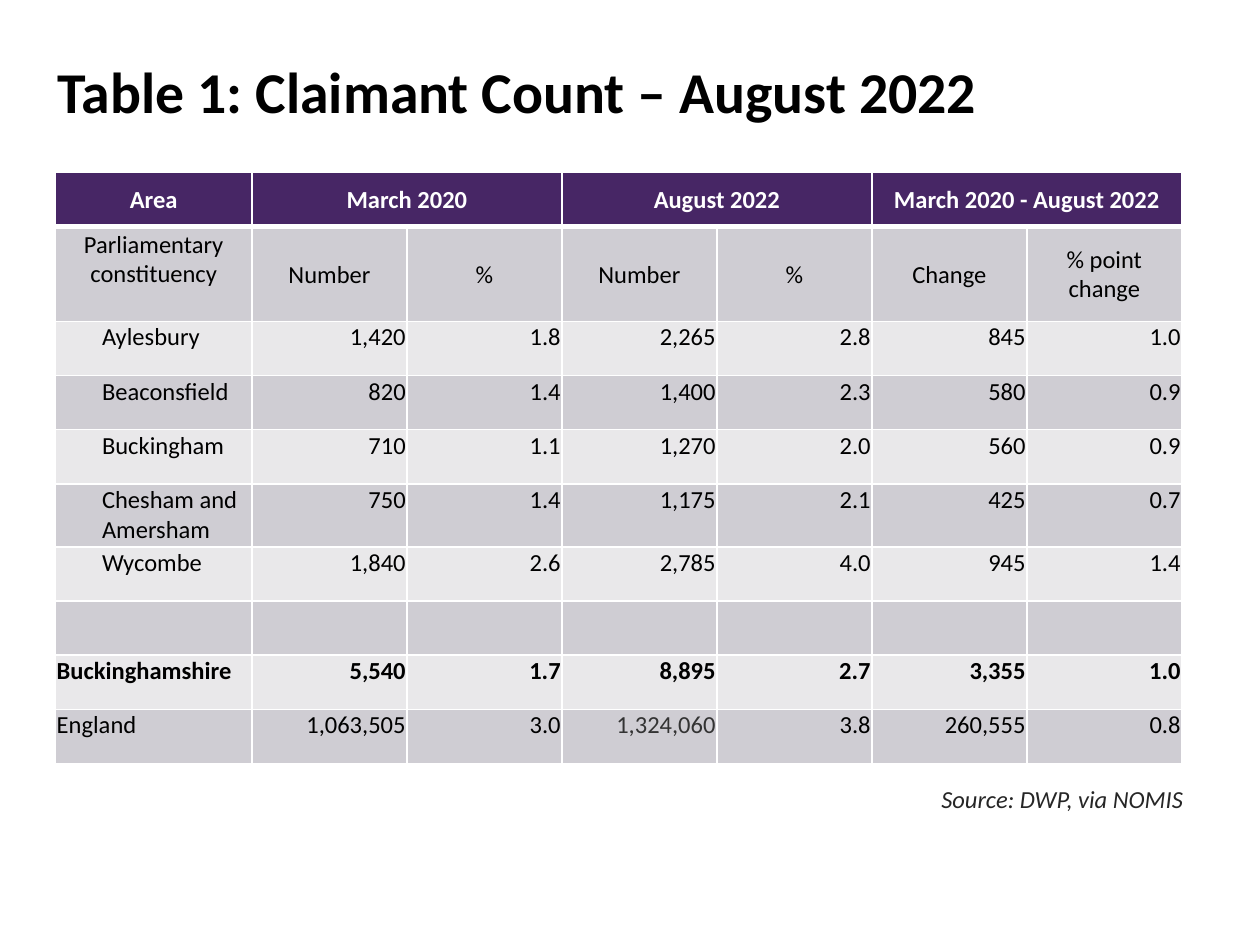
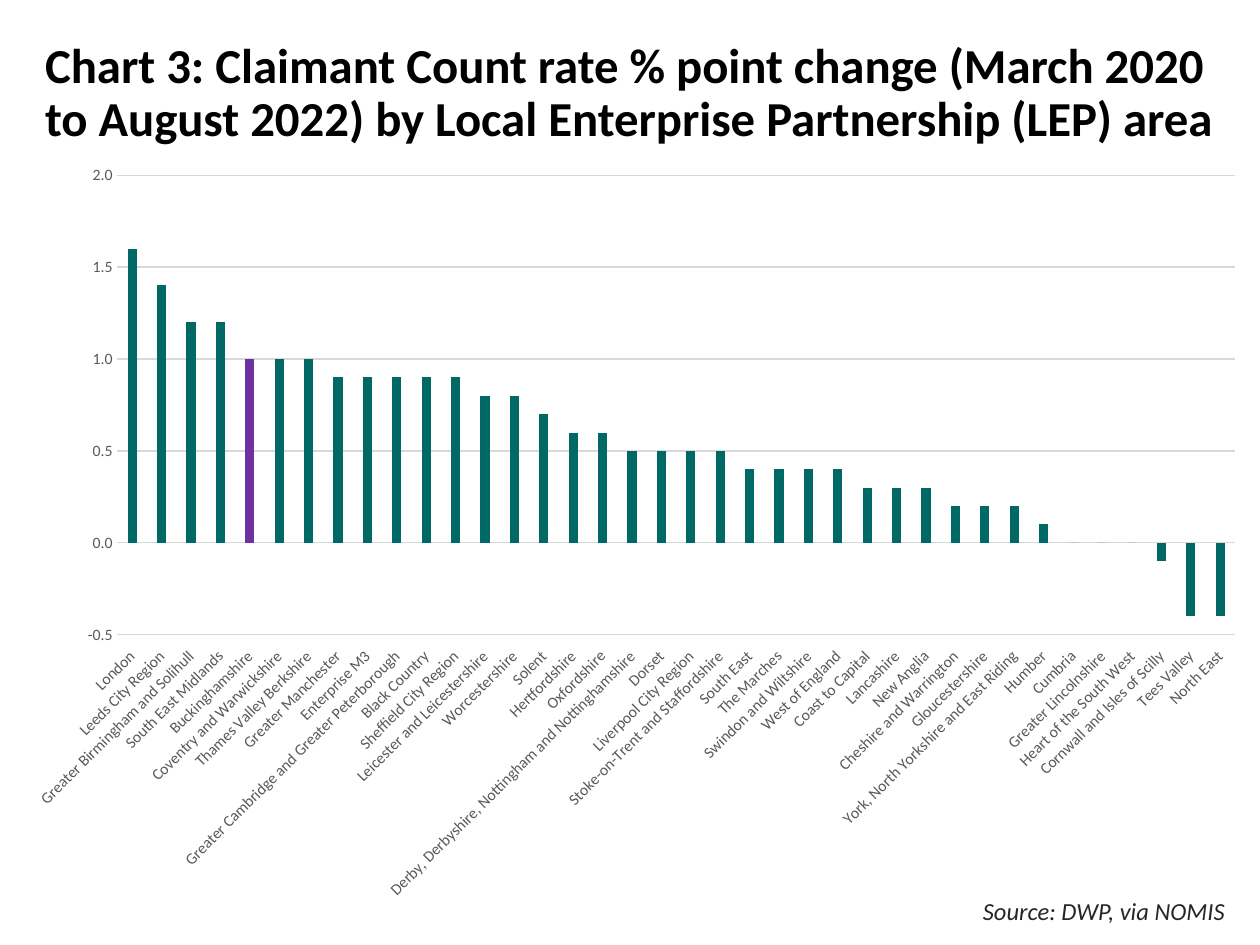
from lxml import etree
from pptx import Presentation
from pptx.chart.data import CategoryChartData
from pptx.dml.color import RGBColor
from pptx.enum.chart import XL_CHART_TYPE, XL_TICK_LABEL_POSITION, XL_TICK_MARK
from pptx.enum.text import MSO_ANCHOR, PP_ALIGN
from pptx.oxml import parse_xml
from pptx.oxml.ns import nsdecls, qn
from pptx.util import Inches, Pt

FONT = "Calibri"
BLACK = RGBColor(0x00, 0x00, 0x00)
WHITE = RGBColor(0xFF, 0xFF, 0xFF)
CHARCOAL = RGBColor(0x33, 0x33, 0x33)
SOURCE_GREY = RGBColor(0x26, 0x26, 0x26)
HEADER_PURPLE = RGBColor(0x47, 0x26, 0x65)
BAND_DARK = RGBColor(0xCF, 0xCD, 0xD3)
BAND_LIGHT = RGBColor(0xE9, 0xE8, 0xEA)
BAR_TEAL = RGBColor(0x00, 0x69, 0x65)
BAR_PURPLE = RGBColor(0x70, 0x30, 0xA0)
AXIS_GREY = RGBColor(0x59, 0x59, 0x59)
GRID_GREY = RGBColor(0xD9, 0xD9, 0xD9)

SOURCE = "Source: DWP, via NOMIS"
TABLE_TITLE = "Table 1: Claimant Count – August 2022"
CHART_TITLE = ("Chart 3: Claimant Count rate % point change (March 2020 to August 2022) "
               "by Local Enterprise Partnership (LEP) area")

HEADER = ["Area", "March 2020", "", "August 2022", "", "March 2020 - August 2022", ""]
SUBHEADER = ["Parliamentary constituency", "Number", "%", "Number", "%", "Change", "% point change"]
CONSTITUENCIES = [
    ["Aylesbury", "1,420", "1.8", "2,265", "2.8", "845", "1.0"],
    ["Beaconsfield", "820", "1.4", "1,400", "2.3", "580", "0.9"],
    ["Buckingham", "710", "1.1", "1,270", "2.0", "560", "0.9"],
    ["Chesham and Amersham", "750", "1.4", "1,175", "2.1", "425", "0.7"],
    ["Wycombe", "1,840", "2.6", "2,785", "4.0", "945", "1.4"],
]
TOTALS = [
    ["Buckinghamshire", "5,540", "1.7", "8,895", "2.7", "3,355", "1.0"],
    ["England", "1,063,505", "3.0", "1,324,060", "3.8", "260,555", "0.8"],
]
ROWS = [HEADER, SUBHEADER, *CONSTITUENCIES, [""] * 7, *TOTALS]
COLUMN_WIDTHS = [1.56] + [1.23] * 6
ROW_HEIGHT = 0.43
TALL_ROWS = {1: 0.75, 5: 0.5}
BUCKINGHAMSHIRE_ROW, ENGLAND_ROW = 8, 9

# Areas grouped by their percentage point change
AREAS_BY_CHANGE = [
    (1.6, ["London"]),
    (1.4, ["Leeds City Region"]),
    (1.2, ["Greater Birmingham and Solihull", "South East Midlands"]),
    (1.0, ["Buckinghamshire", "Coventry and Warwickshire", "Thames Valley Berkshire"]),
    (0.9, ["Greater Manchester", "Enterprise M3", "Greater Cambridge and Greater Peterborough",
           "Black Country", "Sheffield City Region"]),
    (0.8, ["Leicester and Leicestershire", "Worcestershire"]),
    (0.7, ["Solent"]),
    (0.6, ["Hertfordshire", "Oxfordshire"]),
    (0.5, ["Derby, Derbyshire, Nottingham and Nottinghamshire", "Dorset",
           "Liverpool City Region", "Stoke-on-Trent and Staffordshire"]),
    (0.4, ["South East", "The Marches", "Swindon and Wiltshire", "West of England"]),
    (0.3, ["Coast to Capital", "Lancashire", "New Anglia"]),
    (0.2, ["Cheshire and Warrington", "Gloucestershire", "York, North Yorkshire and East Riding"]),
    (0.1, ["Humber"]),
    (0, ["Cumbria", "Greater Lincolnshire", "Heart of the South West"]),
    (-0.1, ["Cornwall and Isles of Scilly"]),
    (-0.4, ["Tees Valley", "North East"]),
]
HIGHLIGHTED_AREA = "Buckinghamshire"
PLOT_AREA = {"x": 0.085, "y": 0.033, "w": 0.895, "h": 0.601}


def style_font(font, size, color, bold=False, italic=False):
    font.name, font.size = FONT, Pt(size)
    font.bold, font.italic = bold, italic
    font.color.rgb = color


def add_text(slide, text, left, top, width, height):
    box = slide.shapes.add_textbox(Inches(left), Inches(top), Inches(width), Inches(height))
    box.text_frame.word_wrap = True
    paragraph = box.text_frame.paragraphs[0]
    paragraph.text = text
    return box.text_frame, paragraph


def add_title(slide, text, left, width, size):
    frame, paragraph = add_text(slide, text, left, 0.24, width, 1.02)
    frame.vertical_anchor = MSO_ANCHOR.MIDDLE
    paragraph.line_spacing = 0.9
    style_font(paragraph.font, size, BLACK, bold=True)


def add_source(slide, left, top):
    _, paragraph = add_text(slide, SOURCE, left, top, 2.38, 0.34)
    paragraph.alignment = PP_ALIGN.RIGHT
    style_font(paragraph.font, 14, SOURCE_GREY, italic=True)


def add_borders(cell, row):
    """White cell lines, with a heavy one between the header and the body."""
    widths = {"L": 1, "R": 1, "T": 3 if row == 1 else 1, "B": 3 if row == 0 else 1}
    properties = cell._tc.get_or_add_tcPr()
    for side, width in widths.items():
        properties.append(parse_xml(
            f'<a:ln{side} {nsdecls("a")} w="{Pt(width)}"><a:solidFill>'
            f'<a:srgbClr val="{WHITE}"/></a:solidFill></a:ln{side}>'))


def fill_cell(cell, row, column, text):
    cell.margin_left = cell.margin_right = cell.margin_top = Inches(0.01)
    cell.margin_bottom = 0
    add_borders(cell, row)
    cell.fill.solid()
    cell.fill.fore_color.rgb = HEADER_PURPLE if row == 0 else BAND_DARK if row % 2 else BAND_LIGHT

    paragraph = cell.text_frame.paragraphs[0]
    paragraph.text = text
    if row < 2:
        cell.vertical_anchor = MSO_ANCHOR.MIDDLE
        paragraph.alignment = PP_ALIGN.CENTER
        if (row, column) == (1, 0):
            cell.margin_bottom = Inches(0.24)
    elif column:
        paragraph.alignment = PP_ALIGN.RIGHT
    elif row < 2 + len(CONSTITUENCIES):
        paragraph._p.get_or_add_pPr().set("marL", str(Inches(0.36)))

    color = WHITE if row == 0 else CHARCOAL if (row, column) == (ENGLAND_ROW, 3) else BLACK
    style_font(paragraph.font, 14, color, bold=row in (0, BUCKINGHAMSHIRE_ROW))


def add_claimant_table(slide):
    heights = [TALL_ROWS.get(row, ROW_HEIGHT) for row in range(len(ROWS))]
    table = slide.shapes.add_table(
        len(ROWS), len(COLUMN_WIDTHS), Inches(0.44), Inches(1.37),
        Inches(sum(COLUMN_WIDTHS)), Inches(sum(heights))).table
    for column, width in zip(table.columns, COLUMN_WIDTHS):
        column.width = Inches(width)
    for row, height in zip(table.rows, heights):
        row.height = Inches(height)
    for row, texts in enumerate(ROWS):
        for column, text in enumerate(texts):
            fill_cell(table.cell(row, column), row, column, text)
    for column in (1, 3, 5):
        table.cell(0, column).merge(table.cell(0, column + 1))


def set_plot_area(chart):
    plot_area = chart._chartSpace.chart.plotArea
    for layout in plot_area.findall(qn("c:layout")):
        plot_area.remove(layout)
    layout = etree.Element(qn("c:layout"))
    manual = etree.SubElement(layout, qn("c:manualLayout"))
    settings = {"layoutTarget": "inner", "xMode": "edge", "yMode": "edge", **PLOT_AREA}
    for name, value in settings.items():
        etree.SubElement(manual, qn(f"c:{name}")).set("val", str(value))
    plot_area.insert(0, layout)


def add_change_chart(slide):
    points = [(area, change) for change, areas in AREAS_BY_CHANGE for area in areas]
    areas, changes = zip(*points)
    data = CategoryChartData(number_format="0.0")
    data.categories = areas
    data.add_series("Series 1", changes)
    chart = slide.shapes.add_chart(
        XL_CHART_TYPE.COLUMN_CLUSTERED, Inches(0.09), Inches(1.19),
        Inches(9.91), Inches(6.07), data).chart
    chart.has_legend = chart.has_title = False
    style_font(chart.font, 10, BLACK)
    set_plot_area(chart)

    plot = chart.plots[0]
    plot.gap_width, plot.overlap = 219, -27
    plot.vary_by_categories = False
    series = plot.series[0]
    series.invert_if_negative = False
    highlighted = series.points[areas.index(HIGHLIGHTED_AREA)]
    for bar, color in ((series, BAR_TEAL), (highlighted, BAR_PURPLE)):
        bar.format.fill.solid()
        bar.format.fill.fore_color.rgb = color

    category_axis, value_axis = chart.category_axis, chart.value_axis
    for axis in (category_axis, value_axis):
        axis.major_tick_mark = axis.minor_tick_mark = XL_TICK_MARK.NONE
        style_font(axis.tick_labels.font, 9, AXIS_GREY)
    category_axis.tick_label_position = XL_TICK_LABEL_POSITION.LOW
    category_axis._element.txPr.find(qn("a:bodyPr")).set("rot", str(-45 * 60000))
    value_axis.minimum_scale, value_axis.maximum_scale = -0.5, 2
    value_axis.major_unit = 0.5
    value_axis.tick_labels.number_format = "#,##0.0"
    value_axis.tick_labels.number_format_is_linked = False
    value_axis.format.line.fill.background()
    for line in (category_axis.format.line, value_axis.major_gridlines.format.line):
        line.color.rgb = GRID_GREY
        line.width = Pt(0.75)


def main():
    presentation = Presentation()
    presentation.slide_width, presentation.slide_height = Inches(10), Inches(7.5)
    blank = presentation.slide_layouts[6]

    table_slide = presentation.slides.add_slide(blank)
    add_title(table_slide, TABLE_TITLE, 0.36, 8.62, 33)
    add_claimant_table(table_slide)
    add_source(table_slide, 7.11, 6.17)

    chart_slide = presentation.slides.add_slide(blank)
    add_title(chart_slide, CHART_TITLE, 0.26, 9.48, 27.9)
    add_source(chart_slide, 7.44, 7.06)
    add_change_chart(chart_slide)

    presentation.save("out.pptx")


if __name__ == "__main__":
    main()
